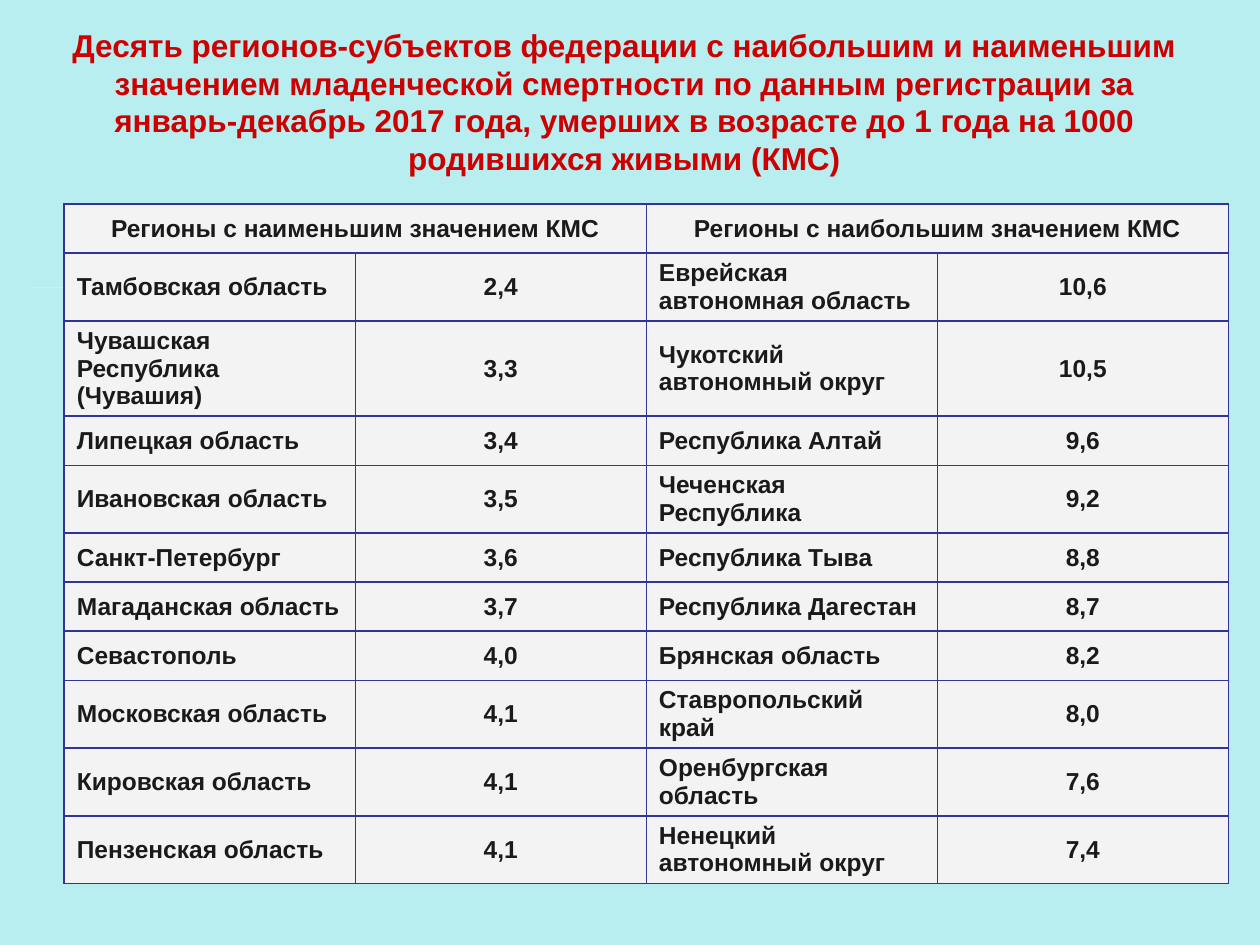
"""Build a slide comparing regions with the lowest and highest infant mortality."""
from lxml import etree
from pptx import Presentation
from pptx.dml.color import RGBColor
from pptx.enum.shapes import MSO_SHAPE
from pptx.enum.text import MSO_ANCHOR, MSO_AUTO_SIZE, PP_ALIGN
from pptx.oxml.ns import qn
from pptx.util import Inches, Pt

LEFT, CENTER = PP_ALIGN.LEFT, PP_ALIGN.CENTER
MIDDLE = MSO_ANCHOR.MIDDLE
NO_AUTOFIT = MSO_AUTO_SIZE.NONE
RECTANGLE = MSO_SHAPE.RECTANGLE

COLORS = {
    "background": "B9EEF1",
    "title": "CC0000",
    "text": "1A1A1A",
    "cell": "F3F3F3",
    "border": "333399",
}
FONT = "Arial"
TITLE = (
    "Десять регионов-субъектов федерации с наибольшим и наименьшим "
    "значением младенческой смертности по данным регистрации за "
    "январь-декабрь 2017 года, умерших в возрасте до 1 года на 1000 "
    "родившихся живыми (КМС)"
)
HEADINGS = ["Регионы с наименьшим значением КМС", "Регионы с наибольшим значением КМС"]
REGIONS = [
    ("Тамбовская область", "2,4", "Еврейская автономная область", "10,6"),
    ("Чувашская Республика (Чувашия)", "3,3", "Чукотский автономный округ", "10,5"),
    ("Липецкая область", "3,4", "Республика Алтай", "9,6"),
    ("Ивановская область", "3,5", "Чеченская Республика", "9,2"),
    ("Санкт-Петербург", "3,6", "Республика Тыва", "8,8"),
    ("Магаданская область", "3,7", "Республика Дагестан", "8,7"),
    ("Севастополь", "4,0", "Брянская область", "8,2"),
    ("Московская область", "4,1", "Ставропольский край", "8,0"),
    ("Кировская область", "4,1", "Оренбургская область", "7,6"),
    ("Пензенская область", "4,1", "Hенецкий автономный округ", "7,4"),
]
COLUMNS = 4
COLUMN_WIDTH = 2.31
ROW_HEIGHT = 0.39


def rgb(name):
    return RGBColor.from_string(COLORS[name])


def write_text(frame, text, *, size, color, align):
    paragraph = frame.paragraphs[0]
    paragraph.alignment = align
    run = paragraph.add_run()
    run.text = text
    run.font.name = FONT
    run.font.size = Pt(size)
    run.font.bold = True
    run.font.color.rgb = rgb(color)


def style_cell(cell):
    cell.vertical_anchor = MIDDLE
    properties = cell._tc.get_or_add_tcPr()
    for side in ("lnL", "lnR", "lnT", "lnB"):
        border = etree.SubElement(properties, qn(f"a:{side}"), w=str(Pt(1)))
        fill = etree.SubElement(border, qn("a:solidFill"))
        etree.SubElement(fill, qn("a:srgbClr"), val=COLORS["border"])
    cell.fill.solid()
    cell.fill.fore_color.rgb = rgb("cell")


def add_title(slide):
    title = slide.shapes.title
    title.left, title.top = Inches(0.35), Inches(0)
    title.width, title.height = Inches(9.21), Inches(1.61)
    frame = title.text_frame
    frame.word_wrap = True
    frame.auto_size = NO_AUTOFIT
    frame.vertical_anchor = MIDDLE
    write_text(frame, TITLE, size=18, color="title", align=CENTER)


def add_rule(slide):
    rule = slide.shapes.add_shape(
        RECTANGLE, Inches(0.25), Inches(2.28), Inches(9), Inches(0)
    )
    rule.shadow.inherit = False
    rule.fill.solid()
    rule.fill.fore_color.rgb = rgb("cell")
    rule.line.fill.background()


def add_region_table(slide):
    row_count = len(REGIONS) + 1
    table = slide.shapes.add_table(
        row_count, COLUMNS, Inches(0.51), Inches(1.62),
        Inches(COLUMN_WIDTH * COLUMNS), Inches(ROW_HEIGHT * row_count),
    ).table
    table.horz_banding = False
    for column in table.columns:
        column.width = Inches(COLUMN_WIDTH)
    for row in table.rows:
        row.height = Inches(ROW_HEIGHT)
    for cell in table.iter_cells():
        style_cell(cell)
    for index, heading in enumerate(HEADINGS):
        cell = table.cell(0, index * 2)
        cell.merge(table.cell(0, index * 2 + 1))
        write_text(cell.text_frame, heading, size=14, color="text", align=CENTER)
    for row_index, region_row in enumerate(REGIONS, start=1):
        for column_index, text in enumerate(region_row):
            write_text(
                table.cell(row_index, column_index).text_frame, text, size=14,
                color="text", align=CENTER if column_index % 2 else LEFT,
            )


def main():
    presentation = Presentation()
    presentation.slide_width, presentation.slide_height = Inches(10), Inches(7.5)
    slide = presentation.slides.add_slide(presentation.slide_layouts[5])
    slide.background.fill.solid()
    slide.background.fill.fore_color.rgb = rgb("background")
    add_title(slide)
    add_rule(slide)
    add_region_table(slide)
    presentation.save("out.pptx")


if __name__ == "__main__":
    main()
